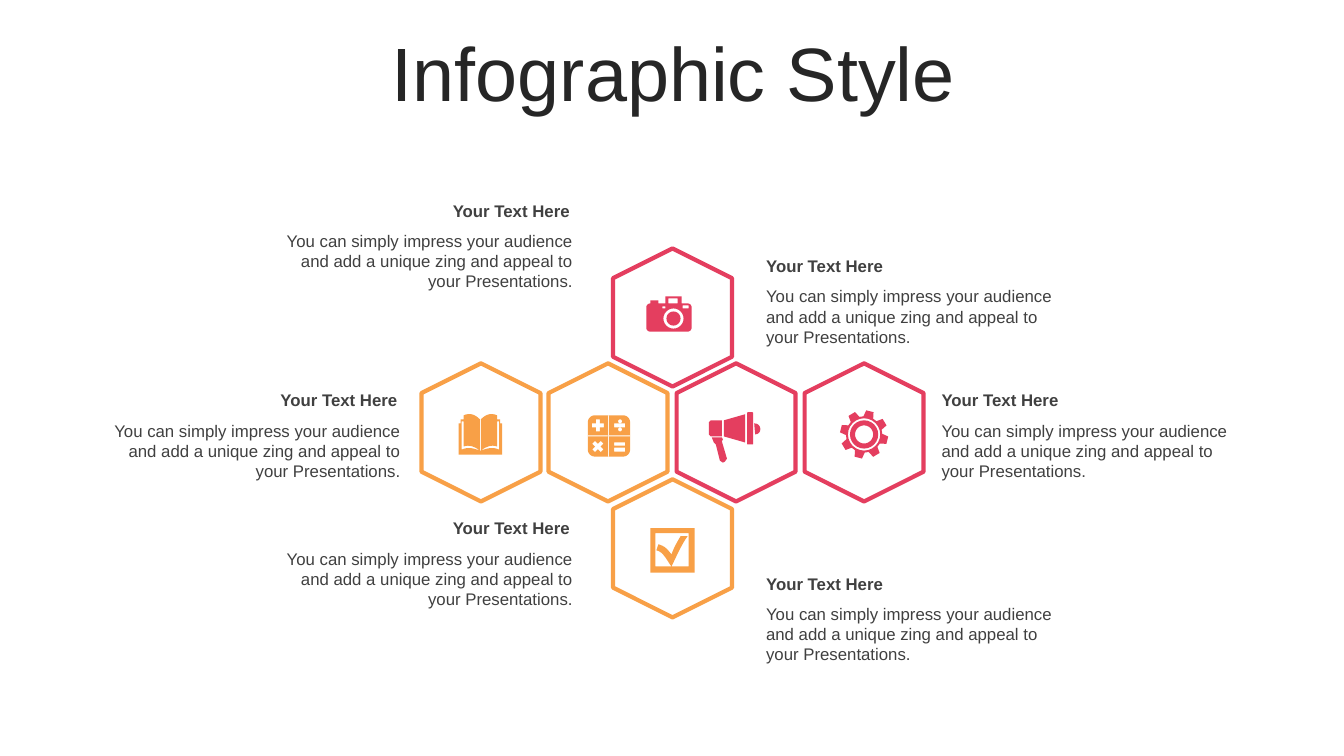
from dataclasses import dataclass
from math import cos, radians, sin

from pptx import Presentation
from pptx.dml.color import RGBColor
from pptx.enum.shapes import MSO_SHAPE
from pptx.enum.text import MSO_ANCHOR, MSO_AUTO_SIZE, PP_ALIGN
from pptx.util import Pt

SCALE = 9144  # EMU per px, 100 px to the inch
TITLE_ONLY = 5


@dataclass(frozen=True)
class Theme:
    font: str = "Arial"
    title_size: int = 54
    text_size: int = 12
    outline: int = 3
    title: RGBColor = RGBColor.from_string("262626")
    text: RGBColor = RGBColor.from_string("404040")
    paper: RGBColor = RGBColor.from_string("FFFFFF")
    red: RGBColor = RGBColor.from_string("E43E5F")
    orange: RGBColor = RGBColor.from_string("F8A047")


THEME = Theme()
HEADING = "Your Text Here"
BODY = ("You can simply impress your audience and add a unique zing "
        "and appeal to your Presentations.")


def px(*lengths):
    return [round(length * SCALE) for length in lengths]


def apply(target, values):
    for name, value in values.items():
        setattr(target, name, value)


def write(shape, text, size, color, bold=False, frame=None, paragraph=None):
    apply(shape.text_frame, {"word_wrap": True, **(frame or {})})
    shape.text_frame.text = text
    first = shape.text_frame.paragraphs[0]
    apply(first, paragraph or {})
    font = first.runs[0].font
    apply(font, {"name": THEME.font, "size": Pt(size), "bold": bold})
    font.color.rgb = color


# Outline pieces: each returns the points of one closed contour
def rectangle(left, top, right, bottom):
    return [(left, top), (right, top), (right, bottom), (left, bottom)]


def arc(x, y, radius, start, end, step=15):
    return [(x + radius * cos(radians(a)), y + radius * sin(radians(a)))
            for a in range(start, end + 1, step)]


def circle(x, y, radius):
    return arc(x, y, radius, 0, 345)


def rounded(left, top, right, bottom, radius):
    corners = [(right - radius, bottom - radius), (left + radius, bottom - radius),
               (left + radius, top + radius), (right - radius, top + radius)]
    return [point for i, (x, y) in enumerate(corners)
            for point in arc(x, y, radius, 90 * i, 90 * i + 90)]


def curve(*controls, steps=8):
    points = []
    for i in range(steps + 1):
        t = i / steps
        weights = ((1 - t) ** 3, 3 * t * (1 - t) ** 2, 3 * t * t * (1 - t), t ** 3)
        points.append(tuple(sum(w * c[axis] for w, c in zip(weights, controls))
                            for axis in (0, 1)))
    return points


def cross(x, y, half, arm, turn=0):
    points = []
    for quarter in range(4):
        a = radians(turn + 90 * quarter)
        for along, across in ((half, -arm), (half, arm), (arm, arm)):
            points.append((x + along * cos(a) - across * sin(a),
                           y + along * sin(a) + across * cos(a)))
    return points


# Icons: contours in px from the middle of the hexagon
def camera():
    return [rounded(-26, -14, 19, 14, 4), rectangle(-22, -17, -14, -14),
            rectangle(-7, -21, 9, -14), rectangle(-4, -19, 5, -14),
            rectangle(-10, -11, -7, -9), rectangle(10, -12, 16, -9),
            circle(1, 1, 10), circle(1, 1, 7)]


def book():
    left_half = [
        (-1, 22), (-22, 22), (-22, -9), (-20, -9), (-20, -13), (-17, -13),
        *curve((-17, -17), (-10, -20), (-5, -17), (-1, -13)),
        *curve((-1, 18), (-6, 14), (-12, 12), (-17, 14)),
        (-17, -11), (-19, -11),
        *curve((-19, 17), (-12, 14), (-7, 16), (-1, 18))]
    right_half = [(-1 - x, y) for x, y in left_half]
    return [left_half, right_half, rectangle(-1, 18, 0, 22)]


def calculator():
    dividers = [rectangle(0, -17, 1, 24), rectangle(-20, 3, 0, 4),
                rectangle(1, 3, 22, 4)]
    signs = [cross(-10, -7, 6, 2), cross(-10, 14, 6, 2, turn=45),
             rectangle(6, -9, 17, -5), circle(12, -3, 2), circle(12, -11, 2),
             rectangle(6, 10, 17, 13), rectangle(6, 15, 17, 19)]
    return [rounded(-20, -17, 22, 24, 7), *dividers, *signs]


def megaphone():
    handle = [(-14, 5), (-13, 7), (-14, 9), (-9, 26), (-11, 29), (-13, 30),
              (-16, 28), (-20, 12), (-22, 10), (-24, 5)]
    grip = [(-25, -12), (-14, -12), (-14, 4), (-25, 4), (-27, 2), (-27, -10)]
    horn = [(9, -18), (9, 10), (-12, 4), (-12, -12)]
    knob = curve((18, -9), (26, -9), (26, 2), (19, 2))
    return [handle, grip, horn, rounded(11, -20, 17, 12, 1), knob]


def gear():
    middle = 2
    teeth = []
    for tooth in range(8):
        for offset, radius in ((-16, 18), (-9, 24), (9, 24), (16, 18)):
            a = radians(14 + 45 * tooth + offset)
            teeth.append((radius * cos(a), middle + radius * sin(a)))
    return [teeth, *(circle(0, middle, radius) for radius in (16, 14, 9))]


def checkbox():
    tick = [*curve((-1, 18), (-5, 13), (-9, 3), (-16, 2)),
            *curve((-14, -4), (-7, -2), (-5, 1), (-1, 6)),
            *curve((-1, 6), (2, -2), (4, -5), (8, -12)),
            *curve((15, -12), (9, -4), (4, 8), (-1, 18))]
    return [rectangle(-22, -20, 22, 24), rectangle(-17, -15, 16, 18), tick]


# Regions
def add_title(slide, left, top, width, height):
    title = slide.shapes.title
    apply(title, dict(zip(("left", "top", "width", "height"),
                          px(left, top, width, height))))
    write(title, "Infographic Style", THEME.title_size, THEME.title,
          frame={"vertical_anchor": MSO_ANCHOR.MIDDLE,
                 "auto_size": MSO_AUTO_SIZE.NONE},
          paragraph={"alignment": PP_ALIGN.CENTER, "line_spacing": 0.9})


def add_caption(slide, left, top, alignment):
    parts = ((BODY, 30, 310, 71, False), (HEADING, 0, 307, 30, True))
    for text, offset, width, height, bold in parts:
        box = slide.shapes.add_textbox(*px(left, top + offset, width, height))
        write(box, text, THEME.text_size, THEME.text, bold,
              frame={"auto_size": MSO_AUTO_SIZE.SHAPE_TO_FIT_TEXT},
              paragraph={"alignment": alignment})


def add_icon(slide, x, y, contours, color):
    outlines = [[tuple(px(x + dx, y + dy)) for dx, dy in contour]
                for contour in contours]
    builder = slide.shapes.build_freeform(*outlines[0][0])
    for index, outline in enumerate(outlines):
        if index:
            builder.move_to(*outline[0])
        builder.add_line_segments(outline[1:], close=True)
    icon = builder.convert_to_shape()
    icon.shadow.inherit = False
    icon.fill.solid()
    icon.fill.fore_color.rgb = color
    icon.line.fill.background()


def add_hexagon(slide, x, y, color):
    length, breadth = 137, 118
    hexagon = slide.shapes.add_shape(
        MSO_SHAPE.HEXAGON, *px(x - length / 2, y - breadth / 2, length, breadth))
    hexagon.rotation = 90
    hexagon.shadow.inherit = False
    hexagon.fill.solid()
    hexagon.fill.fore_color.rgb = THEME.paper
    hexagon.line.color.rgb = color
    hexagon.line.width = Pt(THEME.outline)


def add_honeycomb(slide, left, top, width, height):
    # Cells sit on six half-steps across and two steps down
    cells = ((6, 1, THEME.red, gear), (0, 1, THEME.orange, book),
             (2, 1, THEME.orange, calculator), (3, 0, THEME.red, camera),
             (4, 1, THEME.red, megaphone), (3, 2, THEME.orange, checkbox))
    for column, row, color, icon in cells:
        x, y = left + width * column // 6, top + height * row // 2
        add_hexagon(slide, x, y, color)
        add_icon(slide, x, y, icon(), color)


def main():
    presentation = Presentation()
    presentation.slide_width, presentation.slide_height = px(1333, 750)
    slide = presentation.slides.add_slide(presentation.slide_layouts[TITLE_ONLY])
    add_title(slide, 35, 37, 1266, 79)
    for left, top in ((268, 194), (97, 382), (268, 509)):
        add_caption(slide, left, top, PP_ALIGN.RIGHT)
    for left, top in ((750, 249), (924, 382), (750, 564)):
        add_caption(slide, left, top, PP_ALIGN.LEFT)
    add_honeycomb(slide, 477, 315, 380, 229)
    presentation.save("out.pptx")


if __name__ == "__main__":
    main()
